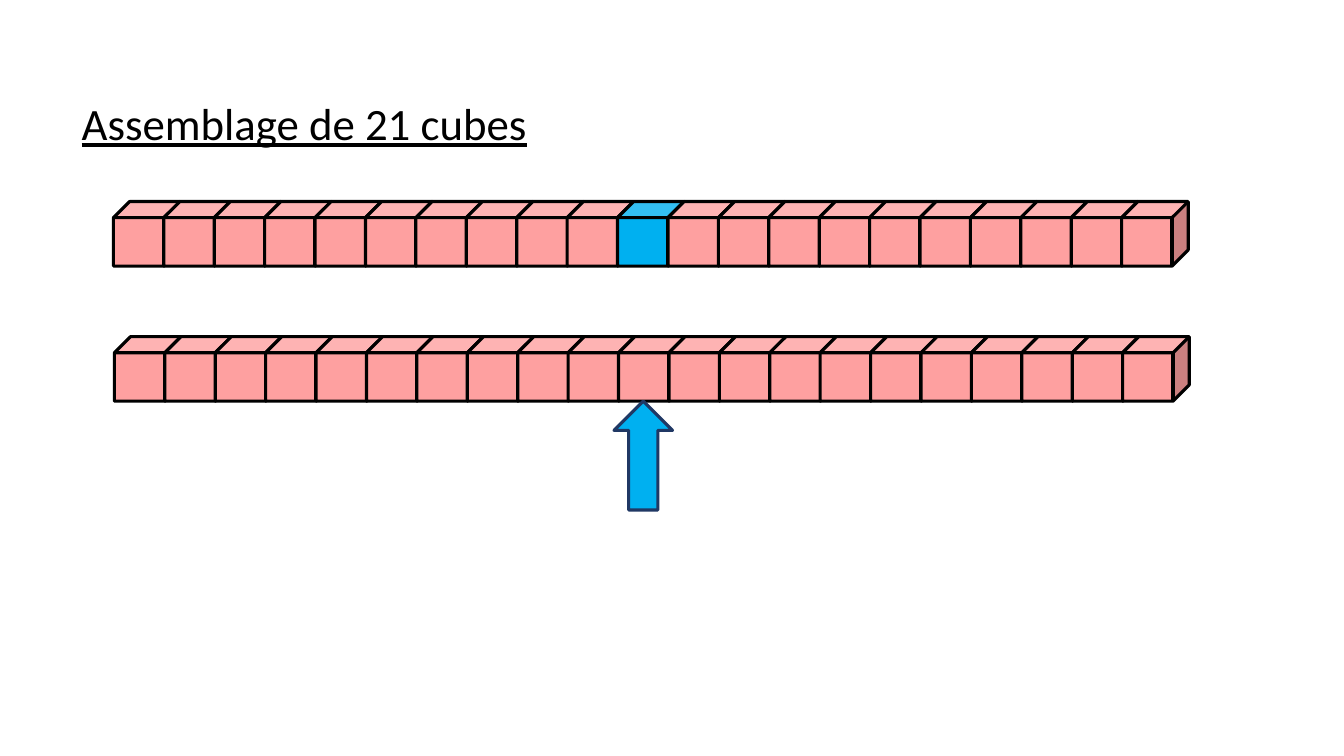
import pptx
import pptx.util
import pptx.dml.color
import pptx.enum.shapes
import pptx.enum.text

SHAPE = pptx.enum.shapes.MSO_SHAPE
COLORS = {
    "ink": "000000",
    "pink": "FEA0A0",
    "blue": "00B0F0",
    "navy": "203864",
}
CUBES = 21
MIDDLE = CUBES // 2


class Board:
    """Draws on one slide; lengths are columns and rows of a half-inch grid."""

    font = "Calibri"
    cell = 0.5
    stroke = 2.25

    def __init__(self, deck):
        self.slide = deck.slides.add_slide(deck.slide_layouts[5])

    def units(self, *cells):
        return [pptx.util.Inches(n * self.cell) for n in cells]

    def color(self, name):
        return pptx.dml.color.RGBColor.from_string(COLORS[name])

    def title(self, text, col, row, wide, high, size):
        box = self.slide.shapes.title
        box.left, box.top, box.width, box.height = self.units(col, row, wide, high)
        frame = box.text_frame
        frame.text = text
        frame.word_wrap = True
        frame.vertical_anchor = pptx.enum.text.MSO_ANCHOR.TOP
        line = frame.paragraphs[0]
        line.alignment = pptx.enum.text.PP_ALIGN.LEFT
        font = line.runs[0].font
        font.name = self.font
        font.size = pptx.util.Pt(size)
        font.underline = True
        font.color.rgb = self.color("ink")

    def shape(self, kind, col, row, wide, high, fill, line, parent=None):
        home = parent or self.slide
        item = home.shapes.add_shape(kind, *self.units(col, row, wide, high))
        item.shadow.inherit = False
        item.fill.solid()
        item.fill.fore_color.rgb = self.color(fill)
        item.line.color.rgb = self.color(line)
        item.line.width = pptx.util.Pt(self.stroke)

    def bar(self, col, row, marked=None):
        """Group a row of cubes, one per column, with an optional blue one."""
        group = self.slide.shapes.add_group_shape()
        for i in range(CUBES):
            fill = "blue" if i == marked else "pink"
            self.shape(SHAPE.CUBE, col + i, row, 1.32, 1.28, fill, "ink", group)


def main():
    deck = pptx.Presentation()
    deck.slide_width = pptx.util.Inches(13.33)
    deck.slide_height = pptx.util.Inches(7.5)

    board = Board(deck)
    board.bar(2.27, 6.68)
    board.bar(2.25, 4, MIDDLE)
    board.title("Assemblage de 21 cubes", 1.42, 1.8, 15.16, 1.28, 32)
    board.shape(SHAPE.UP_ARROW, 12.18, 7.96, 1.16, 2.16, "blue", "navy")

    deck.save("out.pptx")


if __name__ == "__main__":
    main()
